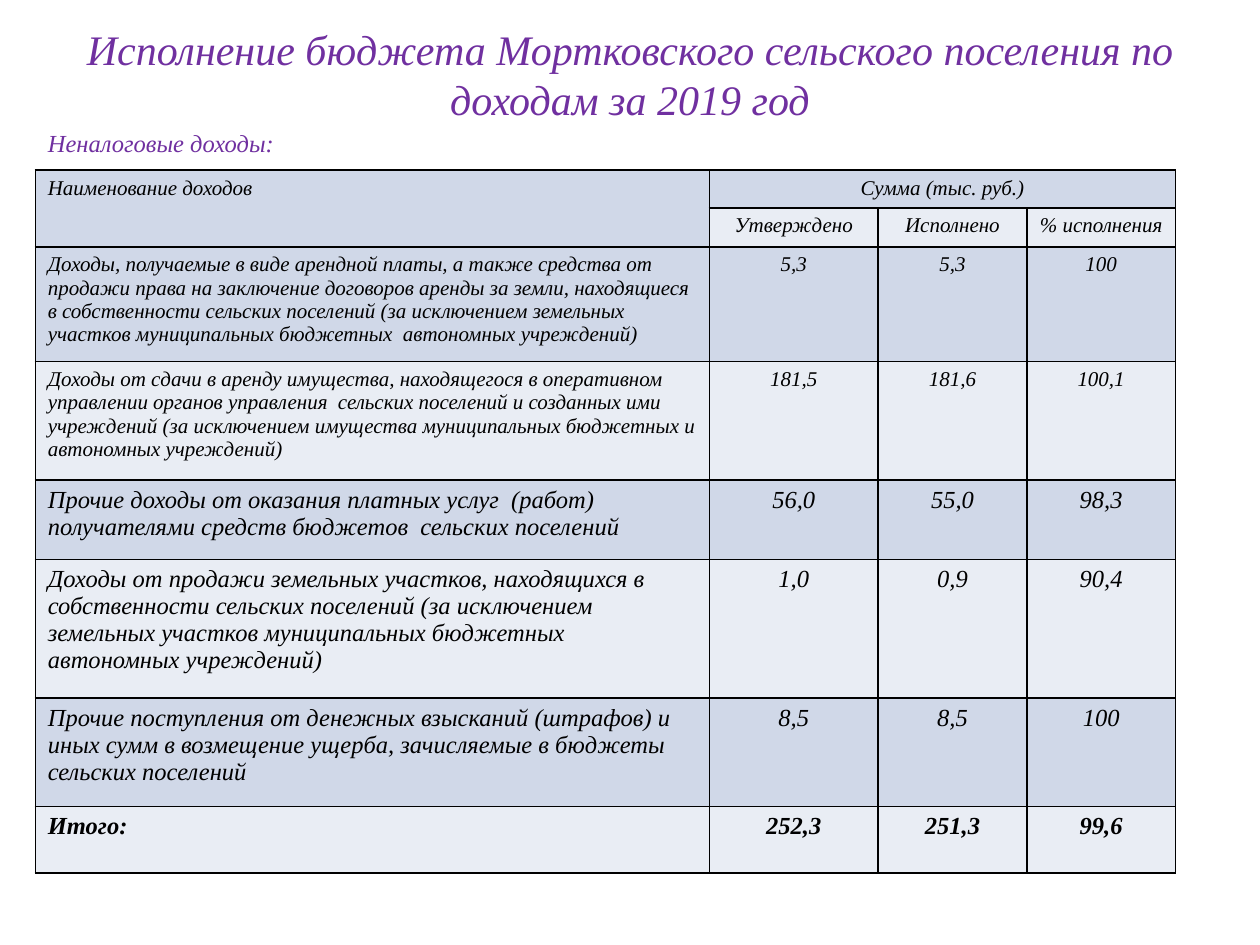
from dataclasses import dataclass

from lxml import etree
from pptx import Presentation
from pptx import util as u
from pptx.dml.color import RGBColor
from pptx.enum import text
from pptx.oxml.ns import qn


@dataclass(frozen=True)
class Theme:
    font: str = "Times New Roman"
    accent: str = "7030A0"
    ink: str = "000000"
    paper: str = "FFFFFF"
    bands: tuple = ("D0D8E8", "E9EDF4")
    title: int = 24
    large: int = 14
    small: int = 12
    border: int = 1


THEME = Theme()
WIDTH, HEIGHT = 10, 7.5
COLS = [5.35, 1.34, 1.18, 1.18]
ROWS = [0.36, 0.3, 0.31, 0.91, 0.94, 0.63, 1.1, 0.86, 0.53]

TITLE = "Исполнение бюджета Мортковского сельского поселения по доходам за 2019 год"
SECTION = "Неналоговые доходы:"
HEADERS = ["Наименование доходов", "Сумма (тыс. руб.)"]
SUBHEADERS = ["Утверждено", "Исполнено", "% исполнения"]
INCOME = [
    ("Доходы, получаемые в виде арендной платы, а также средства от продажи права "
     "на заключение договоров аренды за земли, находящиеся в собственности сельских "
     "поселений (за исключением земельных участков муниципальных бюджетных  "
     "автономных учреждений)", "5,3", "5,3", "100"),
    ("Доходы от сдачи в аренду имущества, находящегося в оперативном управлении "
     "органов управления  сельских поселений и созданных ими учреждений (за "
     "исключением имущества муниципальных бюджетных и автономных учреждений)",
     "181,5", "181,6", "100,1"),
    ("Прочие доходы от оказания платных услуг  (работ) получателями средств "
     "бюджетов  сельских поселений", "56,0", "55,0", "98,3"),
    ("Доходы от продажи земельных участков, находящихся в собственности сельских "
     "поселений (за исключением земельных участков муниципальных бюджетных  "
     "автономных учреждений)", "1,0", "0,9", "90,4"),
    ("Прочие поступления от денежных взысканий (штрафов) и иных сумм в возмещение "
     "ущерба, зачисляемые в бюджеты сельских поселений", "8,5", "8,5", "100"),
    ("Итого:", "252,3", "251,3", "99,6"),
]


def add_run(tf, words, size, color=THEME.ink, centered=False, bold=False):
    p = tf.paragraphs[0]
    p.alignment = text.PP_ALIGN.CENTER if centered else text.PP_ALIGN.LEFT
    r = p.add_run()
    r.text = words
    r.font.name, r.font.size = THEME.font, u.Pt(size)
    r.font.italic, r.font.bold = True, bold
    r.font.color.rgb = RGBColor.from_string(color)


def add_title(slide):
    sp = slide.shapes.add_textbox(u.Inches(0.05 * WIDTH), 0,
                                  u.Inches(0.9 * WIDTH), u.Inches(0.156 * HEIGHT))
    tf = sp.text_frame
    tf.word_wrap = True
    tf.vertical_anchor = text.MSO_ANCHOR.MIDDLE
    add_run(tf, TITLE, THEME.title, THEME.accent, centered=True)


def style_cell(cell, fill, sides):
    """Fill the cell and draw its borders; sides maps L, R, T, B to colours."""
    cell.fill.solid()
    cell.fill.fore_color.rgb = RGBColor.from_string(fill)
    tc_pr = cell._tc.get_or_add_tcPr()
    for i, (side, color) in enumerate(sides.items()):
        ln = etree.Element(qn(f"a:ln{side}"), w=str(u.Pt(THEME.border)))
        solid = etree.SubElement(ln, qn("a:solidFill"))
        etree.SubElement(solid, qn("a:srgbClr"), val=color)
        tc_pr.insert(i, ln)


def style_grid(table):
    for r in range(len(ROWS)):
        for c in range(len(COLS)):
            sides = dict.fromkeys("LRTB", THEME.ink)
            fill = THEME.bands[(r + 1) % 2]
            if r == 0:
                fill = THEME.paper
                sides.update(dict.fromkeys("LRT", THEME.paper))
            elif r == 2 and c == 0:
                fill = THEME.bands[0]
            style_cell(table.cell(r, c), fill, sides)


def fill_row(table, row, values, size, first_col=0, bold=False):
    for c, value in enumerate(values, first_col):
        add_run(table.cell(row, c).text_frame, value, size,
                centered=c > 0, bold=bold)


def add_income_table(slide):
    frame = slide.shapes.add_table(len(ROWS), len(COLS),
                                   u.Inches(0.028 * WIDTH), u.Inches(0.132 * HEIGHT),
                                   u.Inches(sum(COLS)), u.Inches(sum(ROWS)))
    table = frame.table
    table.first_row = table.horz_banding = False
    for col, width in zip(table.columns, COLS):
        col.width = u.Inches(width)
    for row, height in zip(table.rows, ROWS):
        row.height = u.Inches(height)
    style_grid(table)

    # Section line and two-level header
    last = len(COLS) - 1
    for start, end in [((0, 0), (0, last)), ((1, 0), (2, 0)), ((1, 1), (1, last))]:
        table.cell(*start).merge(table.cell(*end))
    add_run(table.cell(0, 0).text_frame, SECTION, THEME.large, THEME.accent)
    fill_row(table, 1, HEADERS, THEME.small)
    fill_row(table, 2, SUBHEADERS, THEME.small, first_col=1)

    # Income rows: the two lease rows are set smaller, the total is bold
    for i, values in enumerate(INCOME):
        size = THEME.small if i < 2 else THEME.large
        fill_row(table, i + 3, values, size, bold=i == len(INCOME) - 1)


def main():
    prs = Presentation()
    prs.slide_width, prs.slide_height = u.Inches(WIDTH), u.Inches(HEIGHT)
    slide = prs.slides.add_slide(prs.slide_layouts[6])
    add_title(slide)
    add_income_table(slide)
    prs.save("out.pptx")


if __name__ == "__main__":
    main()
